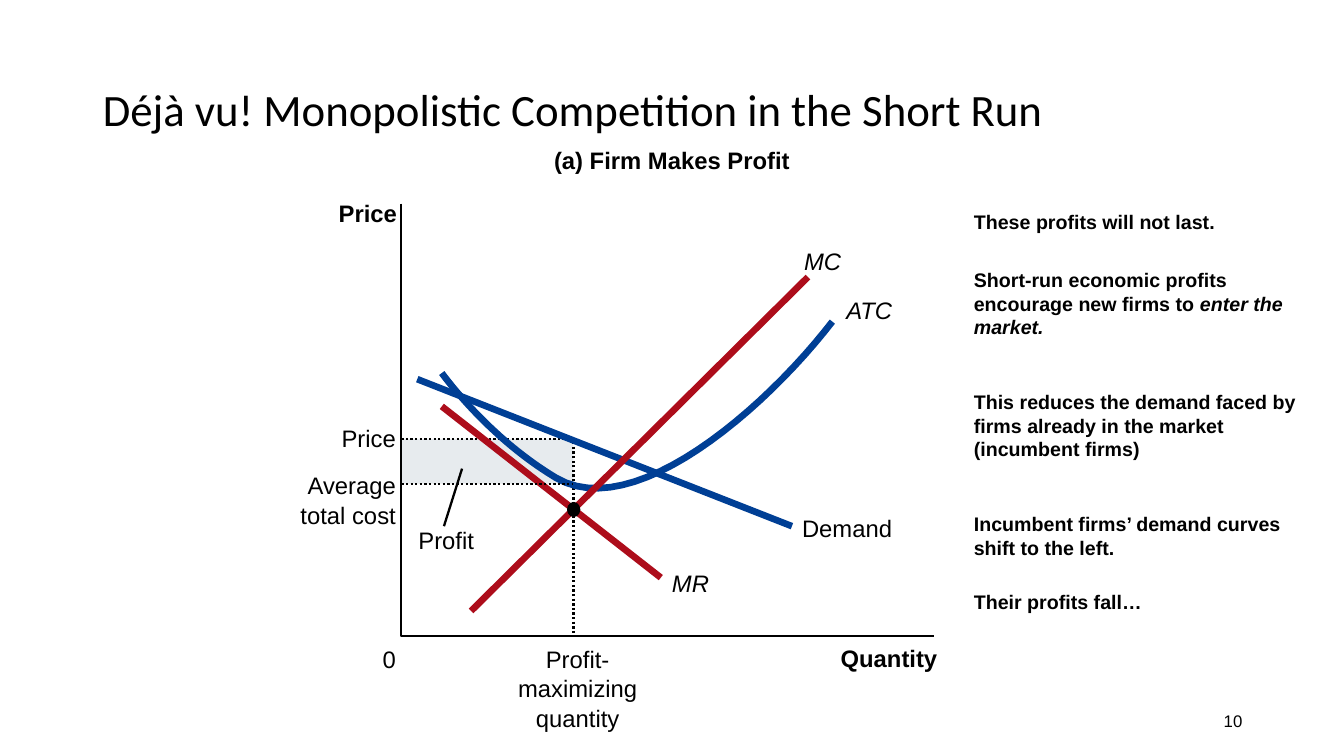
from dataclasses import dataclass
from lxml.etree import SubElement
from pptx import Presentation
from pptx.dml.color import RGBColor
from pptx.enum.dml import MSO_LINE as Dash
from pptx.enum.shapes import MSO_CONNECTOR as Link, MSO_SHAPE as Form
from pptx.enum.text import MSO_ANCHOR as Anchor, PP_ALIGN as Align
from pptx.oxml.ns import qn
from pptx.util import Inches, Pt

HUES = {"ink": "000000", "blue": "003F95", "red": "AD0D1B", "pale": "E7EBEE"}
THIN, BOLD = 1.63, 4.75
SIDES = {0: Align.LEFT, 0.5: Align.CENTER, 1: Align.RIGHT}


@dataclass
class Box:
    """An area whose inner places are given in percent of its size."""
    left: int
    top: int
    wide: int
    high: int

    def at(self, x, y):
        return (int(self.left + self.wide * x / 100),
                int(self.top + self.high * y / 100))

    def sub(self, x, y, wide, high):
        return Box(*self.at(x, y), int(self.wide * wide / 100),
                   int(self.high * high / 100))

    def rect(self):
        return self.left, self.top, self.wide, self.high


def hue(name):
    return RGBColor.from_string(HUES[name])


def write(frame, runs, size=17, font="Arial", bold=False, side=0, gap=None,
          inset=None, wrap=True, mid=False):
    """Fill a frame with one paragraph of (text, italic) runs."""
    frame.word_wrap = wrap
    frame.vertical_anchor = Anchor.MIDDLE if mid else Anchor.TOP
    if inset is not None:
        frame.margin_left = frame.margin_right = Inches(inset)
        frame.margin_top = frame.margin_bottom = Inches(inset)
    para = frame.paragraphs[0]
    para.alignment = SIDES[side]
    if gap:
        para.line_spacing = gap
    for text, slant in runs:
        run = para.add_run()
        run.text = text
        face = run.font
        face.name, face.size = font, Pt(size)
        face.bold, face.italic = bold, slant
        face.color.rgb = hue(ink := "ink")


def stroke(shape, tint, width, dash=None):
    shape.line.color.rgb = hue(tint)
    shape.line.width = Pt(width)
    if dash:
        shape.line.dash_style = dash


def line(slide, box, start, end, tint="ink", width=THIN, dash=None):
    link = slide.shapes.add_connector(
        Link.STRAIGHT, *box.at(*start), *box.at(*end))
    stroke(link, tint, width, dash)
    SubElement(link._element.spPr, qn("a:effectLst"))


def trace(slide, box, points, tint="ink", width=THIN, dash=None):
    first, *rest = [box.at(*point) for point in points]
    pen = slide.shapes.build_freeform(*first)
    pen.add_line_segments(rest, close=False)
    shape = pen.convert_to_shape()
    shape.fill.background()
    shape.shadow.inherit = False
    stroke(shape, tint, width, dash)


def solid(slide, form, box, tint):
    shape = slide.shapes.add_shape(form, *box.rect())
    shape.shadow.inherit = False
    shape.fill.solid()
    shape.fill.fore_color.rgb = hue(tint)
    shape.line.fill.background()


def bezier(a, b, c, d, steps=24):
    """Points after a on the cubic curve from a to d."""
    for step in range(1, steps + 1):
        t = step / steps
        u = 1 - t
        yield tuple(u**3 * p + 3 * u * u * t * q + 3 * u * t * t * r + t**3 * s
                    for p, q, r, s in zip(a, b, c, d))


def label(slide, box, text, x, y, wide, side=0, bold=False, slant=False):
    """Put one line of text whose left, middle or right is at x."""
    spot = box.sub(x - wide * side, y, wide, 6.8)
    write(slide.shapes.add_textbox(*spot.rect()).text_frame,
          [(text, slant)], bold=bold, side=side, inset=0, wrap=False)


def header(slide, box):
    title = slide.shapes.title
    title.left, title.top, title.width, title.height = box.rect()
    write(title.text_frame,
          [("Déjà vu! Monopolistic Competition in the Short Run", False)],
          size=32, font="Calibri", gap=0.8, mid=True)


def graph(slide, box):
    best, price, cost = 32.3, 54.5, 64.8
    solid(slide, Form.RECTANGLE, box.sub(0, price, best, cost - price), "pale")
    trace(slide, box, [(0, 0), (0, 100), (100, 100)])
    trace(slide, box, [(0, price), (best, price), (best, 100)],
          dash=Dash.ROUND_DOT)

    line(slide, box, (3, 40.6), (73.3, 74.6), "blue", BOLD)
    line(slide, box, (7.6, 46.9), (48.7, 86.5), "red", BOLD)
    start, dip = (7.6, 39.2), (29, 63.4)
    trace(slide, box, [start,
                       *bezier(start, (11, 44.8), (18.6, 55.7), dip),
                       *bezier(dip, (43.6, 74.1), (68.4, 47.3), (80.9, 27.3))],
          "blue", BOLD)
    line(slide, box, (0, cost), (best, cost), dash=Dash.ROUND_DOT)
    line(slide, box, (8, 74.6), (11.4, 61.3))
    line(slide, box, (76.3, 17), (13.1, 94.2), "red", BOLD)
    solid(slide, Form.OVAL, box.sub(31.1, 69, 2.5, 3.5), "ink")

    label(slide, box, "(a) Firm Makes Profit", 50.8, -13.3, 44.7, 0.5, bold=True)
    label(slide, box, "Quantity", 100.6, 101.8, 18.4, 1, bold=True)
    label(slide, box, "Price", -0.8, -1.2, 11.2, 1, bold=True)
    for text, y, wide in [("Price", 51, 10.2), ("Average", 61.7, 16.9),
                          ("total cost", 68.6, 18.2), ("0", 101.9, 2.5)]:
        label(slide, box, text, -1, y, wide, 1)
    for row, (text, wide) in enumerate(
            [("Profit-", 12.1), ("maximizing", 22.5), ("quantity", 15.9)]):
        label(slide, box, text, 33.1, 101.9 + 6.9 * row, wide, 0.5)
    for text, x, y, wide, slant in [
            ("Demand", 75.2, 71.8, 17, False), ("Profit", 3.2, 74.4, 10.6, False),
            ("MR", 50.8, 84.4, 7, True), ("ATC", 83.5, 21.4, 8.7, True),
            ("MC", 75.6, 10, 7, True)]:
        label(slide, box, text, x, y, wide, slant=slant)


def notes(slide, box):
    for y, high, *runs in [
            (0, 8.5, ("These profits will not last.", False)),
            (14.1, 19.7,
             ("Short-run economic profits encourage new firms to ", False),
             ("enter the market.", True)),
            (43.6, 19.7, ("This reduces the demand faced by firms already in "
                          "the market (incumbent firms)", False)),
            (73, 13.9, ("Incumbent firms’ demand curves shift to the left.",
                        False)),
            (91.7, 8.3, ("Their profits fall…", False))]:
        spot = box.sub(0, y, 100, high)
        write(slide.shapes.add_textbox(*spot.rect()).text_frame, runs,
              size=14, bold=True)


def number(slide, box):
    write(slide.shapes.add_textbox(*box.rect()).text_frame,
          [("10", False)], size=12, side=1, mid=True)


def main():
    deck = Presentation()
    deck.slide_width, deck.slide_height = Inches(13.33), Inches(7.5)
    slide = deck.slides.add_slide(deck.slide_layouts[5])
    page = Box(0, 0, deck.slide_width, deck.slide_height)
    header(slide, page.sub(6.9, 5.33, 86.27, 19.33))
    graph(slide, page.sub(29.86, 26.93, 39.65, 57.2))
    notes(slide, page.sub(71.72, 27.07, 27.46, 54.8))
    number(slide, page.sub(83.05, 92.67, 10.13, 5.33))
    deck.save("out.pptx")


if __name__ == "__main__":
    main()
